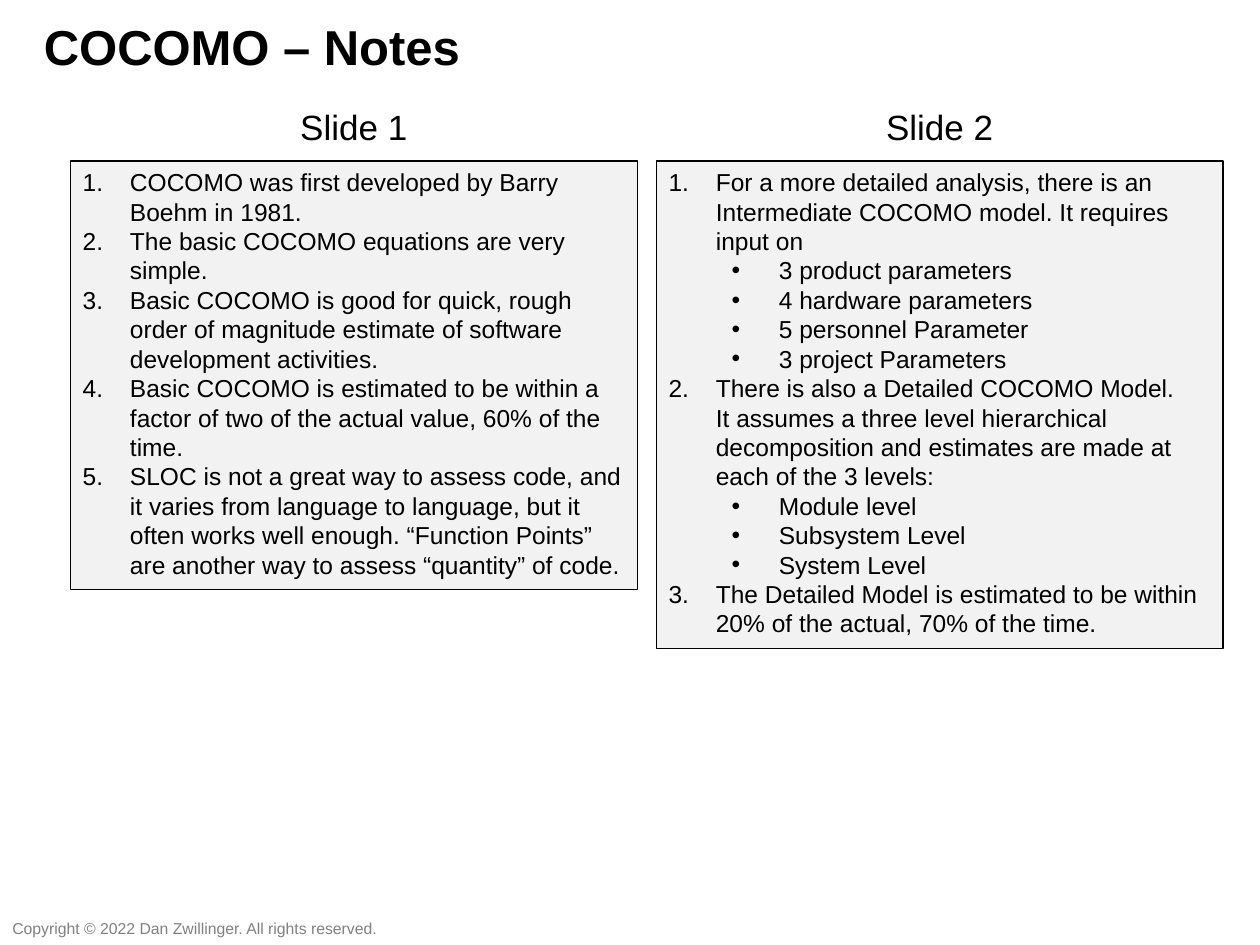
from pptx import Presentation
from pptx.dml.color import RGBColor
from pptx.enum.shapes import MSO_SHAPE
from pptx.enum.text import MSO_ANCHOR, MSO_AUTO_SIZE, PP_ALIGN
from pptx.oxml.ns import qn
from pptx.util import Pt
from lxml import etree

LEFT, CENTER = PP_ALIGN.LEFT, PP_ALIGN.CENTER
RECTANGLE, TOP = MSO_SHAPE.RECTANGLE, MSO_ANCHOR.TOP
GROW = MSO_AUTO_SIZE.SHAPE_TO_FIT_TEXT
BLACK = RGBColor(0x00, 0x00, 0x00)
GRAY = RGBColor(0x80, 0x80, 0x80)
PANEL_FILL = RGBColor(0xF2, 0xF2, 0xF2)

NUMBER, BULLET = 0, 1
INDENT, LEVEL_STEP = 27, 36
COLUMN_WIDTH = 324

COLUMNS = [
    ("Slide 1", 40.2, 245, [
        (NUMBER, "COCOMO was first developed by Barry Boehm in 1981."),
        (NUMBER, "The basic COCOMO equations are very simple."),
        (NUMBER, "Basic COCOMO is good for quick, rough order of magnitude "
                 "estimate of software development activities."),
        (NUMBER, "Basic COCOMO is estimated to be within a factor of two of "
                 "the actual value, 60% of the time."),
        (NUMBER, "SLOC is not a great way to assess code, and it varies from "
                 "language to language, but it often works well enough. "
                 "“Function Points” are another way to assess “quantity” of code."),
    ]),
    ("Slide 2", 375, 278.8, [
        (NUMBER, "For a more detailed analysis, there is an Intermediate "
                 "COCOMO model. It requires input on"),
        (BULLET, "3 product parameters"),
        (BULLET, "4 hardware parameters"),
        (BULLET, "5 personnel Parameter"),
        (BULLET, "3 project Parameters"),
        (NUMBER, "There is also a Detailed COCOMO Model.\vIt assumes a three "
                 "level hierarchical decomposition and estimates are made at "
                 "each of the 3 levels:"),
        (BULLET, "Module level"),
        (BULLET, "Subsystem Level"),
        (BULLET, "System Level"),
        (NUMBER, "The Detailed Model is estimated to be within 20% of the "
                 "actual, 70% of the time."),
    ]),
]


def write(para, text, size, color=BLACK, bold=False, align=LEFT):
    para.text = text
    para.alignment = align
    font_format = {"name": "Arial", "size": Pt(size), "bold": bold}
    for span in para.runs:
        for name, value in font_format.items():
            setattr(span.font, name, value)
        span.font.color.rgb = color


def set_marker(para, level):
    """Give the paragraph a hanging number (level 0) or bullet (level 1)."""
    para.level = level
    properties = para._p.get_or_add_pPr()
    properties.set("marL", str(Pt(INDENT + level * LEVEL_STEP)))
    properties.set("indent", str(-Pt(INDENT)))
    font = etree.SubElement(properties, qn("a:buFont"))
    font.set("typeface", "Arial")
    if level == NUMBER:
        marker = etree.SubElement(properties, qn("a:buAutoNum"))
        marker.set("type", "arabicPeriod")
    else:
        marker = etree.SubElement(properties, qn("a:buChar"))
        marker.set("char", "•")


deck = Presentation()
deck.slide_width, deck.slide_height = Pt(720), Pt(540)
page = deck.slides.add_slide(deck.slide_layouts[6])

# Title, column headings and copyright line
labels = [("COCOMO – Notes", (18, 5.8, 567, 41.2), True,
           {"size": 28, "bold": True})]
for heading, left, height, notes in COLUMNS:
    labels.append((heading, (left, 57, COLUMN_WIDTH, 31.5), True,
                   {"size": 20, "align": CENTER}))
labels.append(("Copyright © 2022 Dan Zwillinger. All rights reserved.",
               (0, 521.5, 225, 18.2), False, {"size": 9, "color": GRAY}))
for text, place, wrap, text_format in labels:
    box = page.shapes.add_textbox(*map(Pt, place))
    box.text_frame.word_wrap = wrap
    box.text_frame.auto_size = GROW
    write(box.text_frame.paragraphs[0], text, **text_format)

# Note panels
for heading, left, height, notes in COLUMNS:
    panel = page.shapes.add_shape(
        RECTANGLE, Pt(left), Pt(92), Pt(COLUMN_WIDTH), Pt(height))
    panel.shadow.inherit = False
    panel.fill.solid()
    panel.fill.fore_color.rgb = PANEL_FILL
    panel.line.color.rgb = BLACK
    panel.line.width = Pt(0.75)
    frame = panel.text_frame
    frame_format = {"word_wrap": True, "auto_size": GROW, "vertical_anchor": TOP}
    for name, value in frame_format.items():
        setattr(frame, name, value)
    for index, (level, text) in enumerate(notes):
        para = frame.add_paragraph() if index else frame.paragraphs[0]
        write(para, text, 14)
        set_marker(para, level)

deck.save("out.pptx")
